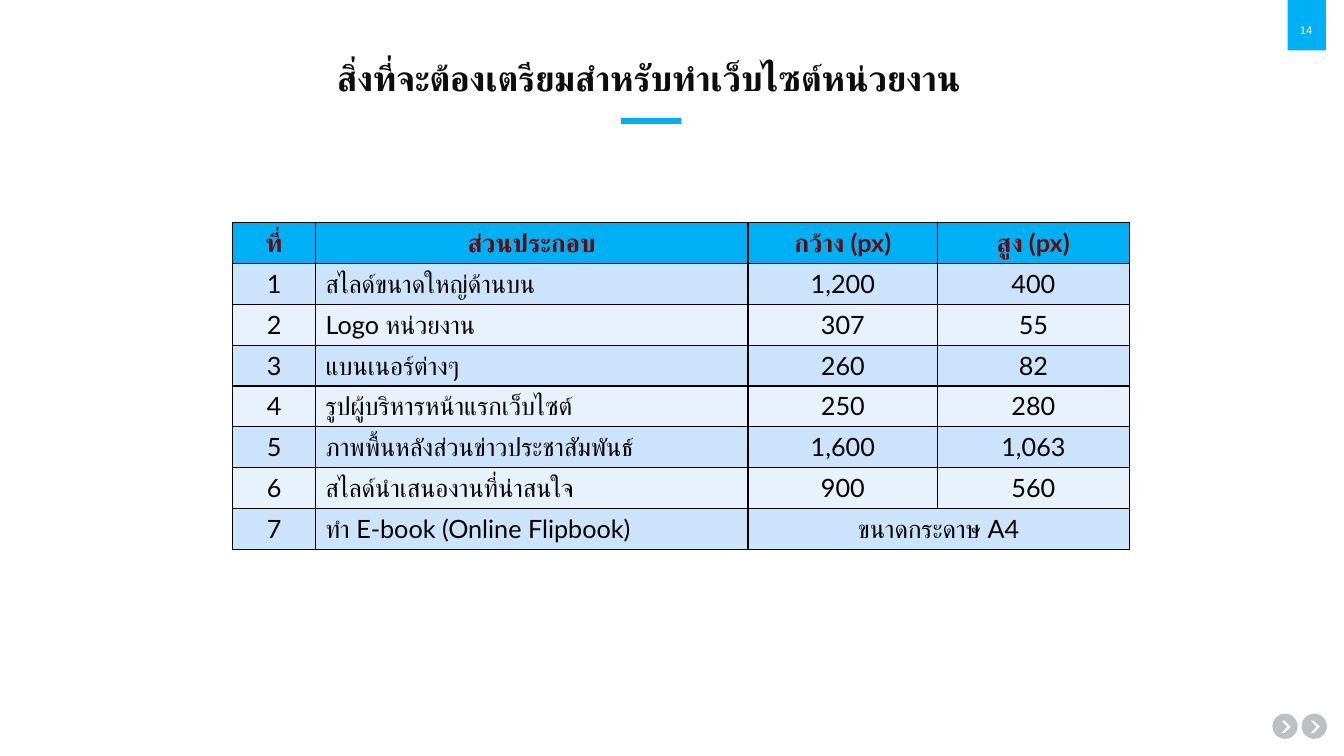
from lxml import etree
from pptx import Presentation
from pptx.dml.color import RGBColor
from pptx.enum.shapes import MSO_SHAPE
from pptx.enum.text import MSO_ANCHOR, MSO_AUTO_SIZE, PP_ALIGN
from pptx.oxml import parse_xml
from pptx.oxml.ns import nsdecls, qn
from pptx.util import Inches, Pt

RECTANGLE, OVAL, CHEVRON = MSO_SHAPE.RECTANGLE, MSO_SHAPE.OVAL, MSO_SHAPE.CHEVRON
LEFT, CENTER = PP_ALIGN.LEFT, PP_ALIGN.CENTER
MIDDLE = MSO_ANCHOR.MIDDLE
NO_AUTOFIT = MSO_AUTO_SIZE.NONE
BLUE, GREY, WHITE, BLACK, MAROON = "00B0F5", "7D8287", "FFFFFF", "000000", "6B0A0A"
BANDS = ["E7F2FD", "CCE4FB"]


def write_text(text_frame, text, alignment, color, font_format):
    paragraph = text_frame.paragraphs[0]
    paragraph.alignment = alignment
    run = paragraph.add_run()
    run.text = text
    for name, value in font_format.items():
        setattr(run.font, name, value)
    run.font.color.rgb = RGBColor.from_string(color)
    complex_font = etree.SubElement(run.font._element, qn("a:cs"))
    complex_font.set("typeface", font_format["name"])


def add_filled_shape(kind, left, top, width, height, color):
    shape = slide.shapes.add_shape(kind, Inches(left), Inches(top), Inches(width), Inches(height))
    shape.shadow.inherit = False
    shape.fill.solid()
    shape.fill.fore_color.rgb = RGBColor.from_string(color)
    shape.line.fill.background()
    return shape


presentation = Presentation()
presentation.slide_width = Inches(13.33)
presentation.slide_height = Inches(7.5)
slide = presentation.slides.add_slide(presentation.slide_layouts[5])

add_filled_shape(RECTANGLE, 12.77, -0.03, 0.38, 0.53, BLUE)
page_number = slide.shapes.add_textbox(Inches(12.72), Inches(0.19), Inches(0.47), Inches(0.21))
page_number.text_frame.word_wrap = True
page_number.text_frame.vertical_anchor = MIDDLE
write_text(page_number.text_frame, "14", CENTER, "FEFEFE", {"name": "Arial", "size": Pt(8)})

for button_left in (12.91, 12.62):
    button = add_filled_shape(OVAL, button_left, 7.08, 0.25, 0.25, GREY)
    button_color = button._element.spPr.find(qn("a:solidFill")).find(qn("a:srgbClr"))
    etree.SubElement(button_color, qn("a:alpha")).set("val", "50000")
    arrow = add_filled_shape(CHEVRON, button_left + 0.09, 7.15, 0.09, 0.12, WHITE)
    arrow.adjustments[0] = 0.66

title = slide.shapes.title
title_place = {"left": 2.81, "top": 0.52, "width": 7.25, "height": 0.55}
for name, value in title_place.items():
    setattr(title, name, Inches(value))
title_format = {"word_wrap": True, "auto_size": NO_AUTOFIT, "vertical_anchor": MIDDLE}
for name, value in title_format.items():
    setattr(title.text_frame, name, value)
write_text(title.text_frame, "สิ่งที่จะต้องเตรียมสำหรับทำเว็บไซต์หน่วยงาน", CENTER, "0D0D0D",
           {"name": "Lato", "size": Pt(25), "bold": True})
title.text_frame.paragraphs[0].line_spacing = 0.9
add_filled_shape(RECTANGLE, 6.16, 1.17, 0.6, 0.06, BLUE)

rows = [
    ("ที่", "ส่วนประกอบ", "กว้าง (px)", "สูง (px)"),
    ("1", "สไลด์ขนาดใหญ่ด้านบน", "1,200", "400"),
    ("2", "Logo หน่วยงาน", "307", "55"),
    ("3", "แบนเนอร์ต่างๆ", "260", "82"),
    ("4", "รูปผู้บริหารหน้าแรกเว็บไซต์", "250", "280"),
    ("5", "ภาพพื้นหลังส่วนข่าวประชาสัมพันธ์", "1,600", "1,063"),
    ("6", "สไลด์นำเสนองานที่น่าสนใจ", "900", "560"),
    ("7", "ทำ E-book (Online Flipbook)", "ขนาดกระดาษ A4", ""),
]
column_widths = [0.82, 4.29, 1.88, 1.9]
table = slide.shapes.add_table(len(rows), len(column_widths), Inches(2.31), Inches(2.21),
                               Inches(8.89), Inches(3.24)).table
for column, width in zip(table.columns, column_widths):
    column.width = Inches(width)
table.cell(7, 2).merge(table.cell(7, 3))

for row_index, row in enumerate(rows):
    is_header = row_index == 0
    fill_color = BLUE if is_header else BANDS[row_index % 2]
    for column_index, text in enumerate(row):
        cell = table.cell(row_index, column_index)
        cell.fill.solid()
        cell.fill.fore_color.rgb = RGBColor.from_string(fill_color)
        if text:
            alignment = LEFT if column_index == 1 and not is_header else CENTER
            write_text(cell.text_frame, text, alignment, MAROON if is_header else BLACK,
                       {"name": "Lato", "size": Pt(18), "bold": is_header})
        cell_properties = cell._tc.get_or_add_tcPr()
        for position, side in enumerate(("lnL", "lnR", "lnT", "lnB")):
            border = parse_xml(
                f'<a:{side} {nsdecls("a")} w="12700"><a:solidFill>'
                f'<a:srgbClr val="{BLACK}"/></a:solidFill></a:{side}>')
            cell_properties.insert(position, border)

presentation.save("out.pptx")
